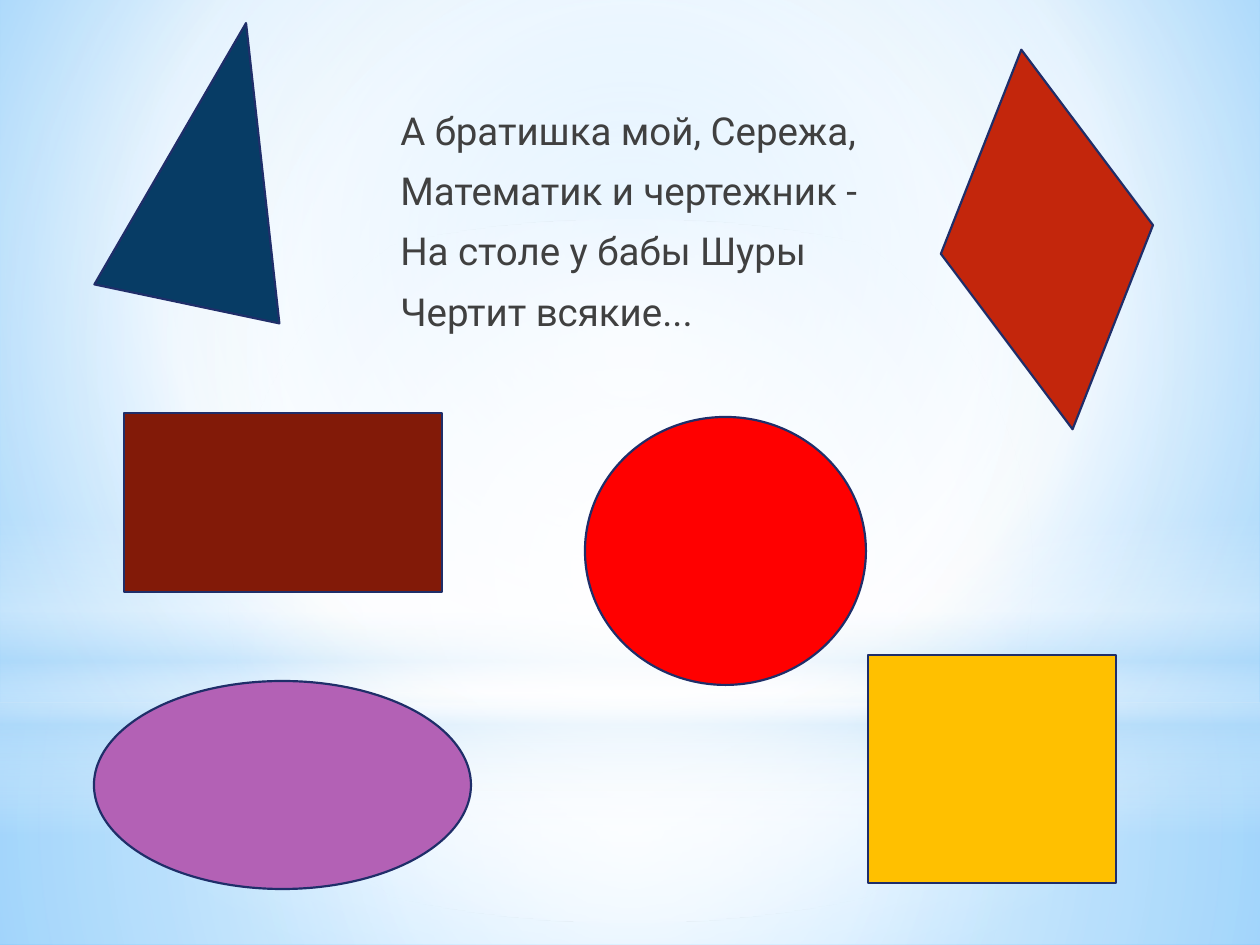
"""Build a slide with a geometry riddle and six coloured figures."""
import lxml.etree
import pptx
import pptx.dml.color
import pptx.enum.shapes
import pptx.enum.text
import pptx.oxml.ns
import pptx.util

PX = 914400 // 126
COLORS = {
    "white": "FFFFFF", "haze": "B4DCFA", "sky": "9ED5FF", "azure": "5BB9FF",
    "outline": "1F2E69", "text": "404040", "brown": "821A08", "navy": "073C65",
    "red": "FF0000", "purple": "B361B5", "yellow": "FFC000", "rust": "C3260C",
}
SHAPE = pptx.enum.shapes.MSO_SHAPE
CENTER = (50, 50, 50, 50)


def set_gradient(fill, owner, stops, focus):
    fill.gradient()
    qn = pptx.oxml.ns.qn
    gradient = next(owner.iter(qn("a:gradFill")))
    for child in list(gradient):
        gradient.remove(child)
    stop_list = lxml.etree.SubElement(gradient, qn("a:gsLst"))
    for position, color, opacity in stops:
        stop = lxml.etree.SubElement(stop_list, qn("a:gs"), pos=str(position * 1000))
        rgb = lxml.etree.SubElement(stop, qn("a:srgbClr"), val=COLORS[color])
        if opacity < 100:
            lxml.etree.SubElement(rgb, qn("a:alpha"), val=str(opacity * 1000))
    if focus:
        circle = lxml.etree.SubElement(gradient, qn("a:path"), {"path": "circle"})
        edges = {side: str(value * 1000) for side, value in zip("ltrb", focus)}
        lxml.etree.SubElement(circle, qn("a:fillToRect"), edges)
    else:
        lxml.etree.SubElement(gradient, qn("a:lin"), ang="5400000", scaled="0")


def add_figure(kind, box):
    shape = slide.shapes.add_shape(kind, *[value * PX for value in box])
    shape.shadow.inherit = False
    return shape


presentation = pptx.Presentation()
presentation.slide_width = pptx.util.Inches(10)
presentation.slide_height = pptx.util.Inches(7.5)
slide = presentation.slides.add_slide(presentation.slide_layouts[6])
set_gradient(
    slide.background.fill, slide.element,
    [(0, "sky", 100), (60, "white", 100), (100, "azure", 100)], (20, 10, 20, 60),
)

glows = [
    (SHAPE.RECTANGLE, (0, 703, 1260, 242), CENTER,
     [(0, "white", 91), (37, "white", 76), (100, "haze", 79)]),
    (SHAPE.RECTANGLE, (0, 0, 1260, 703), CENTER,
     [(0, "white", 89), (48, "white", 62), (100, "haze", 79)]),
    (SHAPE.RECTANGLE, (0, 519, 1260, 315), None,
     [(0, "white", 0), (29, "white", 30), (45, "haze", 40),
      (55, "white", 26), (65, "haze", 60), (100, "white", 0)]),
    (SHAPE.OVAL, (0, 220, 1260, 703), CENTER,
     [(0, "white", 100), (56, "white", 0)]),
]
for kind, box, focus, stops in glows:
    glow = add_figure(kind, box)
    glow.line.fill.background()
    set_gradient(glow.fill, glow.element, stops, focus)

verse = slide.shapes.add_textbox(*[value * PX for value in (388, 101, 652, 479)])
frame = verse.text_frame
frame.word_wrap = True
frame.vertical_anchor = pptx.enum.text.MSO_ANCHOR.TOP
frame.text = "\n".join([
    "А братишка мой, Сережа,",
    "Математик и чертежник -",
    "На столе у бабы Шуры",
    "Чертит всякие...",
])
for paragraph in frame.paragraphs:
    paragraph.space_before = pptx.util.Pt(5)
    paragraph.space_after = pptx.util.Pt(3)
    paragraph.font.name = "Roboto"
    paragraph.font.size = pptx.util.Pt(22)
    paragraph.font.color.rgb = pptx.dml.color.RGBColor.from_string(COLORS["text"])

figures = [
    (SHAPE.RECTANGLE, (124, 413, 318, 179), 0, "brown"),
    (SHAPE.ISOSCELES_TRIANGLE, (122, 20, 189, 287), 11.9, "navy"),
    (SHAPE.OVAL, (585, 417, 281, 268), 0, "red"),
    (SHAPE.OVAL, (94, 681, 377, 208), 0, "purple"),
    (SHAPE.RECTANGLE, (868, 655, 248, 228), 0, "yellow"),
    (SHAPE.DIAMOND, (940, 48, 214, 383), 352.3, "rust"),
]
for kind, box, rotation, color in figures:
    figure = add_figure(kind, box)
    figure.rotation = rotation
    figure.fill.solid()
    figure.fill.fore_color.rgb = pptx.dml.color.RGBColor.from_string(COLORS[color])
    figure.line.color.rgb = pptx.dml.color.RGBColor.from_string(COLORS["outline"])
    figure.line.width = pptx.util.Pt(1.25)

presentation.save("out.pptx")
